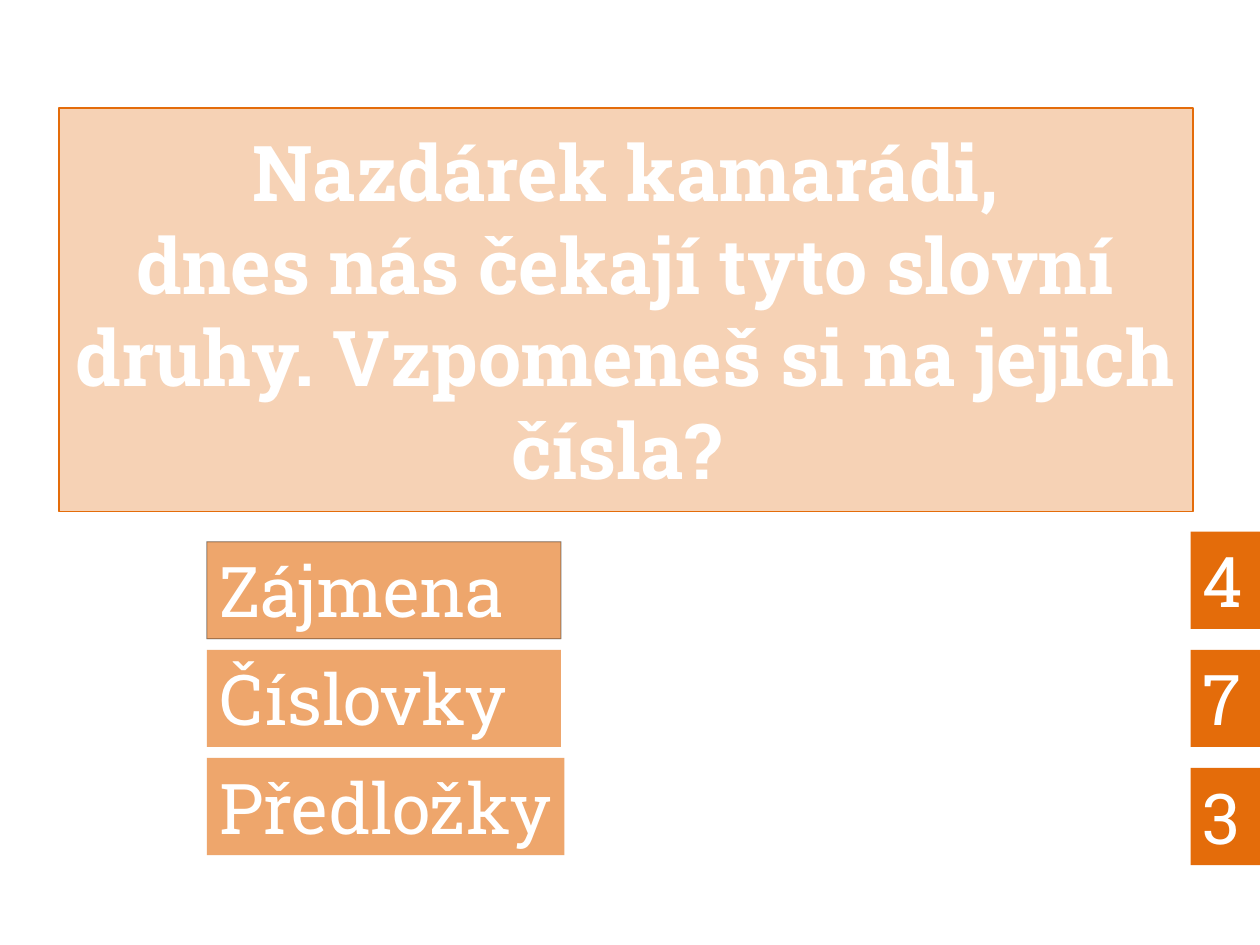
import pptx
import pptx.dml.color
import pptx.enum.shapes
import pptx.enum.text
import pptx.oxml.ns
import pptx.util
from lxml import etree
from pptx.util import Cm

ORANGE = "E46C0A"
WHITE = "FFFFFF"
BLACK = "000000"
FONT = "Roboto Slab"


def set_color(color_fill, color, opacity=100):
    color_fill.solid()
    color_fill.fore_color.rgb = pptx.dml.color.RGBColor.from_string(color)
    if opacity < 100:
        for element in color_fill._xPr.iter(pptx.oxml.ns.qn("a:srgbClr")):
            alpha = etree.SubElement(element, pptx.oxml.ns.qn("a:alpha"))
            alpha.set("val", str(opacity * 1000))


def add_box(slide, text, left, top, width, height, opacity=100):
    shape = slide.shapes.add_shape(
        pptx.enum.shapes.MSO_SHAPE.RECTANGLE, left, top, width, height
    )
    shape.shadow.inherit = False
    set_color(shape.fill, ORANGE, opacity)
    shape.line.fill.background()
    shape.text_frame.text = text
    return shape


def set_outline(shape, color, opacity=100):
    shape.line.width = pptx.util.Pt(0.75)
    set_color(shape.line.fill, color, opacity)


def format_text(shape, size, alignment, anchor, bold=False, wrap=True):
    text_frame = shape.text_frame
    text_frame.word_wrap = wrap
    text_frame.vertical_anchor = anchor
    for paragraph in text_frame.paragraphs:
        paragraph.alignment = alignment
        for run in paragraph.runs:
            run.font.name = FONT
            run.font.size = pptx.util.Pt(size)
            run.font.bold = bold
            set_color(run.font.fill, WHITE)


def add_title(slide, text):
    shape = add_box(slide, text, Cm(1.19), Cm(2.18), Cm(22.86), Cm(8.13), 30)
    set_outline(shape, ORANGE)
    format_text(
        shape,
        44,
        pptx.enum.text.PP_ALIGN.CENTER,
        pptx.enum.text.MSO_ANCHOR.MIDDLE,
        bold=True,
    )


def add_label(slide, text, left, top, width, opacity=100, wrap=True):
    shape = add_box(slide, text, left, top, width, Cm(1.96), opacity)
    format_text(
        shape,
        40,
        pptx.enum.text.PP_ALIGN.LEFT,
        pptx.enum.text.MSO_ANCHOR.TOP,
        wrap=wrap,
    )
    shape.text_frame.auto_size = pptx.enum.text.MSO_AUTO_SIZE.SHAPE_TO_FIT_TEXT
    return shape


def main():
    presentation = pptx.Presentation()
    presentation.slide_width = Cm(25.4)
    presentation.slide_height = Cm(19.05)
    slide = presentation.slides.add_slide(presentation.slide_layouts[6])

    add_title(
        slide,
        "Nazdárek kamarádi,\vdnes nás čekají tyto slovní druhy. "
        "Vzpomeneš si na jejich čísla? ",
    )

    word_classes = [
        ("Zájmena", 7.14, True),
        ("Číslovky", 7.14, True),
        ("Předložky", 7.21, False),
    ]
    labels = [
        add_label(slide, text, Cm(4.17), Cm(10.92 + 2.18 * row), Cm(width), 60, wrap)
        for row, (text, width, wrap) in enumerate(word_classes)
    ]
    set_outline(labels[0], BLACK, 30)

    for row, number in enumerate("473"):
        add_label(slide, number, Cm(24), Cm(10.72 + 2.38 * row), Cm(1.4), wrap=False)

    presentation.save("out.pptx")


if __name__ == "__main__":
    main()
